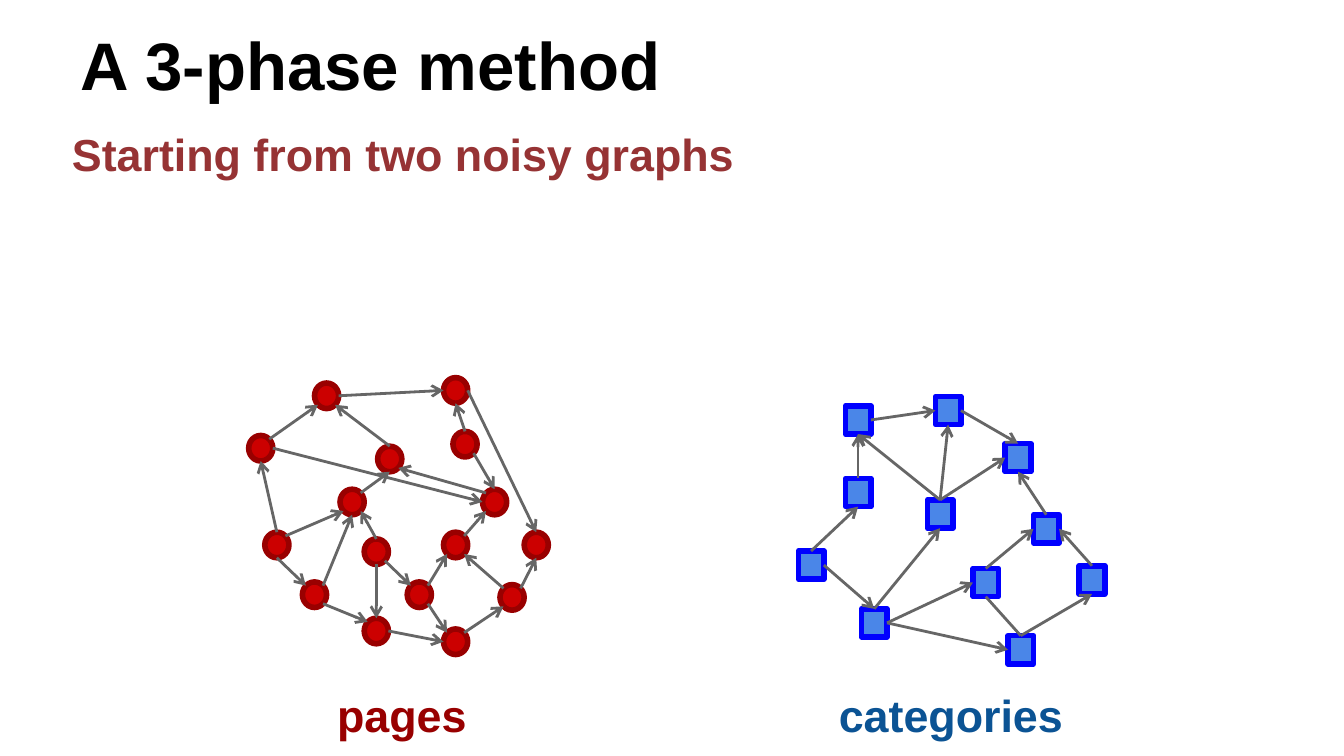
from dataclasses import dataclass
from lxml.etree import SubElement
from pptx import Presentation
from pptx.dml.color import RGBColor
from pptx.enum.shapes import MSO_CONNECTOR, MSO_SHAPE
from pptx.enum.text import MSO_ANCHOR, MSO_AUTO_SIZE, PP_ALIGN
from pptx.oxml.ns import qn
from pptx.util import Inches, Pt


@dataclass(frozen=True)
class Theme:
    font: str = "Arial"
    black: str = "000000"
    brick: str = "963334"
    maroon: str = "980000"
    navy: str = "0B5394"
    grey: str = "666666"
    dot: tuple = ("CC0000", "990000")
    box: tuple = ("4A86E8", "0000FF")
    head: int = 36
    text: int = 24
    rim: float = 3
    edge: float = 1.5


theme = Theme()
deck = Presentation()
deck.slide_width = Inches(10)
deck.slide_height = deck.slide_width * 9 // 16
cell = deck.slide_width / 100
slide = deck.slides.add_slide(deck.slide_layouts[1])


def grid(*spans):
    return [round(span * cell) for span in spans]


def write(shape, area, words, size, color, anchor, align):
    places = dict(zip(("left", "top", "width", "height"), grid(*area)))
    for name, value in places.items():
        setattr(shape, name, value)
    frame = shape.text_frame
    pad = grid(1)[0]
    form = dict(margin_left=pad, margin_right=pad, margin_top=pad, margin_bottom=pad,
                word_wrap=True, auto_size=MSO_AUTO_SIZE.NONE, vertical_anchor=anchor)
    for name, value in form.items():
        setattr(frame, name, value)
    line = frame.paragraphs[0]
    line.alignment, line.space_before = align, Pt(0)
    run = line.add_run()
    run.text = words
    for name, value in dict(name=theme.font, size=Pt(size), bold=True).items():
        setattr(run.font, name, value)
    run.font.color.rgb = RGBColor.from_string(color)
    return line


title, body = slide.placeholders
write(title, (5, 2.25, 90, 6.5), "A 3-phase method",
      theme.head, theme.black, MSO_ANCHOR.BOTTOM, PP_ALIGN.LEFT)
lead = write(body, (3.55, 8.4, 59.3, 15.7), "Starting from two noisy graphs",
             theme.text, theme.brick, MSO_ANCHOR.TOP, PP_ALIGN.LEFT)
props = lead._p.get_or_add_pPr()
for name, value in dict(marL=Inches(0.5), indent=Inches(-0.42)).items():
    props.set(name, str(value))
SubElement(props, qn("a:buNone"))

for words, left, width, color in (("pages", 20.85, 18.1, theme.maroon),
                                  ("categories", 61, 19.5, theme.navy)):
    label = slide.shapes.add_textbox(0, 0, 0, 0)
    write(label, (left, 50.65, width, 5.1), words,
          theme.text, color, MSO_ANCHOR.MIDDLE, PP_ALIGN.CENTER)

pages = dict(
    a=(37.2, 43.5), b=(33.7, 32.1), c=(35.9, 36.4), d=(39, 39.6),
    e=(33, 46.8), f=(22.5, 43.3), g=(19.7, 39.6), h=(27.1, 46),
    i=(18.5, 32.4), j=(25.3, 36.4), k=(27.1, 40.1), l=(30.3, 43.3),
    m=(28.1, 33.2), n=(33, 39.6), o=(33, 28.1), p=(23.4, 28.5))
links = """g ne j sw, i ne p sw, g n i s, m n p se, j ne m s, b n o s,
    n ne c sw, c nw m se, b se c n, k n j se, g s f nw, f se h nw,
    h e e w, e ne a sw, a ne d s, a nw n se, l ne n sw, k se l nw,
    l se e nw, f ne j s, i e c w, k s h n, p e o w, o e d n"""

topics = dict(
    a=(62.9, 30.2), b=(69.6, 29.5), c=(62.9, 35.6), d=(69, 37.2),
    e=(74.8, 33), f=(72.4, 42.3), g=(80.3, 42.1), h=(64.1, 45.3),
    i=(75, 47.3), j=(59.4, 41), k=(76.9, 38.3))
paths = """j e h n, j n c s, h n d s, h e f w, i n f s plain, i n g s,
    g n k e, f n k w, d n a s, d n b s, d n e w, k n e s,
    c n a s, a e b w, h e i w, b e e n"""

slant = 0.5 ** 0.5
sides = dict(n=(0, -1), s=(0, 1), e=(1, 0), w=(-1, 0),
             ne=(slant, -slant), nw=(-slant, -slant),
             se=(slant, slant), sw=(-slant, slant))

for nodes, edges, kind, size, paint in (
        (pages, links, MSO_SHAPE.OVAL, (1.8, 1.9), theme.dot),
        (topics, paths, MSO_SHAPE.RECTANGLE, (1.9, 2.1), theme.box)):
    graph = slide.shapes.add_group_shape()
    for spot in nodes.values():
        node = graph.shapes.add_shape(kind, *grid(*spot, *size))
        node.shadow.inherit = False
        node.fill.solid()
        node.fill.fore_color.rgb = RGBColor.from_string(paint[0])
        node.line.color.rgb = RGBColor.from_string(paint[1])
        node.line.width = Pt(theme.rim)
    for edge in edges.split(","):
        start, out, end, into, *plain = edge.split()
        ends = [at + span * (1 + turn) / 2
                for key, side in ((start, out), (end, into))
                for at, span, turn in zip(nodes[key], size, sides[side])]
        arrow = graph.shapes.add_connector(MSO_CONNECTOR.STRAIGHT, *grid(*ends))
        arrow.line.color.rgb = RGBColor.from_string(theme.grey)
        arrow.line.width = Pt(theme.edge)
        shape = arrow._element.spPr
        if not plain:
            SubElement(shape.find(qn("a:ln")), qn("a:tailEnd"), type="arrow")
        SubElement(shape, qn("a:effectLst"))

deck.save("out.pptx")
